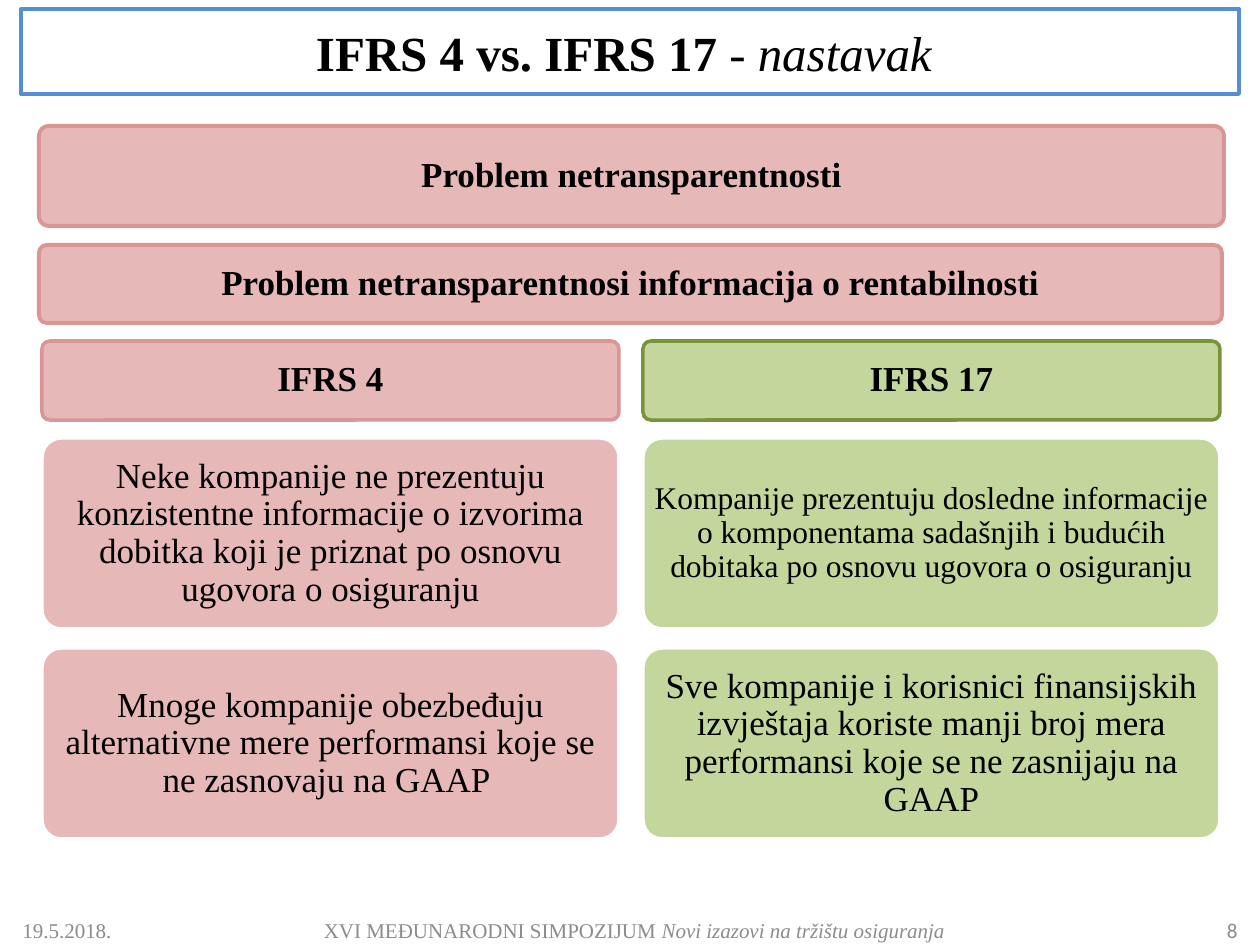
from dataclasses import dataclass
from pptx import Presentation
from pptx import util as u
from pptx.dml.color import RGBColor
from pptx.enum import shapes, text

PX = 914400 / 126


@dataclass(frozen=True)
class Theme:
    serif: str = "Times New Roman"
    sans: str = "Calibri"
    ink: str = "000000"
    gray: str = "8C8C8C"
    white: str = "FFFFFF"
    frame: str = "558ED5"
    rose: str = "E6B9B8"
    rim: str = "D99694"
    lime: str = "C3D69B"
    olive: str = "77933C"
    title: int = 28
    body: int = 20
    small: int = 18
    foot: int = 12
    bold: float = 2.25
    thin: float = 2


T = Theme()


def px(n):
    return round(n * PX)


def rgb(code):
    return RGBColor.from_string(code)


def write(shape, parts, size, color=T.ink, font=T.serif, align=text.PP_ALIGN.CENTER):
    frame = shape.text_frame
    frame.word_wrap = True
    frame.vertical_anchor = text.MSO_ANCHOR.MIDDLE
    para = frame.paragraphs[0]
    para.alignment = align
    for words, bold, slant in parts:
        run = para.add_run()
        run.text = words
        face = run.font
        face.name, face.size = font, u.Pt(size)
        face.bold, face.italic = bold, slant
        face.color.rgb = rgb(color)
    return frame


def block(slide, kind, box, line, width, fill=None):
    shape = slide.shapes.add_shape(kind, *map(px, box))
    shape.shadow.inherit = False
    if fill:
        shape.fill.solid()
        shape.fill.fore_color.rgb = rgb(fill)
    else:
        shape.fill.background()
    shape.line.color.rgb = rgb(line)
    shape.line.width = u.Pt(width)
    return shape


def card(slide, box, words, fill, line, width=T.thin, bold=False, size=T.body):
    kind = shapes.MSO_SHAPE.ROUNDED_RECTANGLE
    shape = block(slide, kind, box, line, width, fill)
    shape.adjustments[0] = 0.1
    frame = write(shape, [(words, bold, False)], size)
    frame.margin_left = frame.margin_right = px(4)
    frame.margin_top = frame.margin_bottom = px(4)
    frame.paragraphs[0].line_spacing = 0.9


def column(slide, left, fill, line, head, notes):
    card(slide, (left, 341, 577, 79), head, fill, line, bold=True)
    for row, (words, size) in enumerate(notes):
        box = (left, 438 + row * 210, 577, 191)
        card(slide, box, words, fill, T.white, size=size)


def footer(slide, left, width, parts, align, font=T.serif):
    box = slide.shapes.add_textbox(*map(px, (left, 905, width, 50)))
    write(box, parts, T.foot, T.gray, font, align)


def main():
    deck = Presentation()
    deck.slide_width, deck.slide_height = px(1260), px(945)
    slide = deck.slides.add_slide(deck.slide_layouts[6])
    side = text.PP_ALIGN

    footer(slide, 10, 147, [("19.5.2018.", False, False)], side.LEFT)
    footer(slide, 293, 683, [("XVI MEĐUNARODNI SIMPOZIJUM ", False, False),
                             ("Novi izazovi na tržištu osiguranja", False, True)],
           side.CENTER)
    footer(slide, 1197, 53, [("8", False, False)], side.RIGHT, T.sans)

    card(slide, (39, 126, 1185, 100), "Problem netransparentnosti",
         T.rose, T.rim, T.bold, True)
    card(slide, (39, 245, 1183, 78),
         "Problem netransparentnosi informacija o rentabilnosti",
         T.rose, T.rim, T.bold, True)

    column(slide, 42, T.rose, T.rim, "IFRS 4", [
        ("Neke kompanije ne prezentuju konzistentne informacije o izvorima "
         "dobitka koji je priznat po osnovu ugovora o osiguranju", T.body),
        ("Mnoge kompanije obezbeđuju alternativne mere performansi koje se "
         "ne zasnovaju na GAAP ", T.body)])
    column(slide, 643, T.lime, T.olive, "IFRS 17", [
        ("Kompanije prezentuju dosledne informacije o komponentama sadašnjih "
         "i budućih dobitaka po osnovu ugovora o osiguranju", T.small),
        ("Sve kompanije i korisnici finansijskih izvještaja koriste manji broj "
         "mera performansi koje se ne zasnijaju na GAAP", T.body)])

    title = block(slide, shapes.MSO_SHAPE.RECTANGLE, (21, 9, 1218, 85),
                  T.frame, T.bold)
    write(title, [("IFRS 4 vs. IFRS 17 ", True, False),
                  ("- nastavak ", False, True)], T.title)
    deck.save("out.pptx")


if __name__ == "__main__":
    main()
